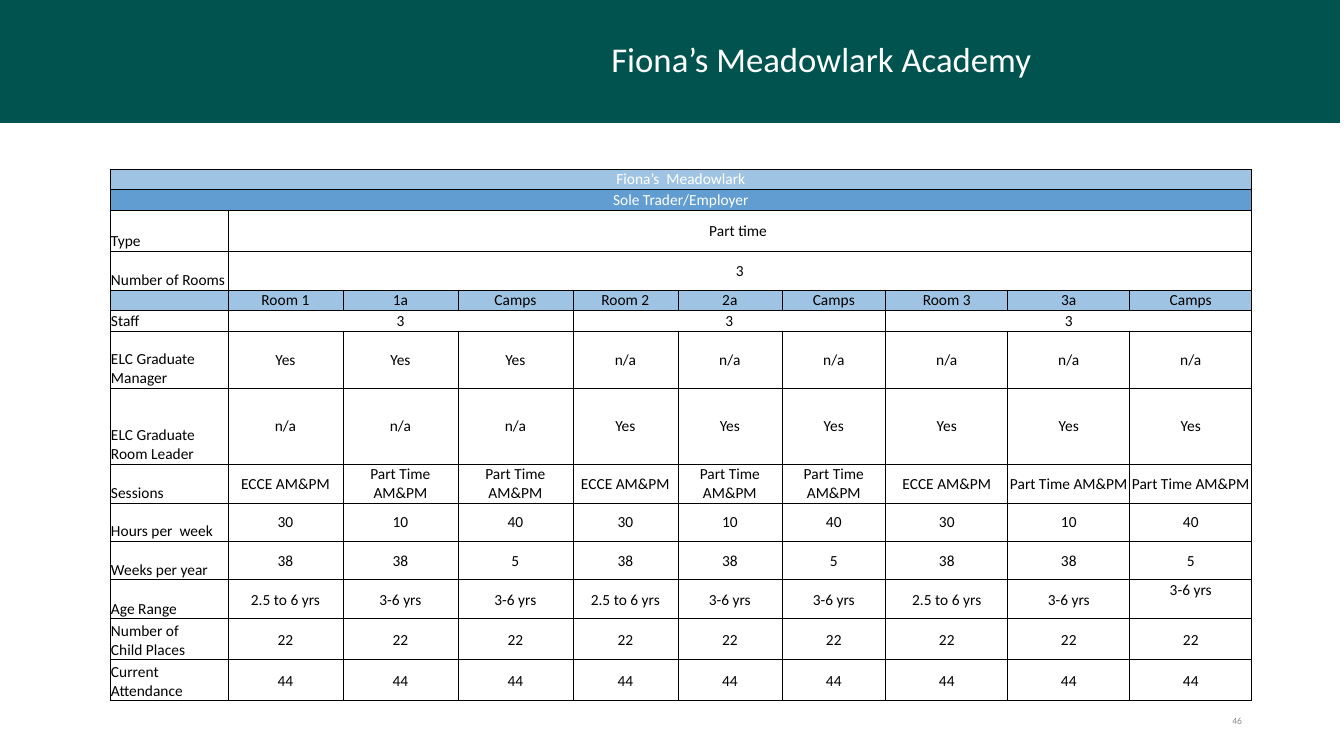
from lxml import etree
from pptx import Presentation, util as u
from pptx.dml.color import RGBColor
from pptx.enum import shapes, text
from pptx.oxml import ns

PX = 914400 / 100.8
FONT = "Calibri"
COLORS = {"green": "00534F", "light": "9FC4E3", "blue": "629DD1",
          "white": "FFFFFF", "black": "000000", "grey": "8C8C8C"}


def px(*lengths):
    return [u.Emu(round(length * PX)) for length in lengths]


def format_text(frame, size, color, align, anchor):
    frame.vertical_anchor = anchor
    frame.word_wrap = True
    for paragraph in frame.paragraphs:
        paragraph.alignment = align
        paragraph.font.name = FONT
        paragraph.font.size = u.Pt(size)
        paragraph.font.color.rgb = RGBColor.from_string(COLORS[color])


LEFT, CENTER, RIGHT = text.PP_ALIGN.LEFT, text.PP_ALIGN.CENTER, text.PP_ALIGN.RIGHT
TOP, MIDDLE, BOTTOM = text.MSO_ANCHOR.TOP, text.MSO_ANCHOR.MIDDLE, text.MSO_ANCHOR.BOTTOM

presentation = Presentation()
presentation.slide_width, presentation.slide_height = px(1344, 756)
slide = presentation.slides.add_slide(presentation.slide_layouts[5])

# Header band and title
band = slide.shapes.add_shape(shapes.MSO_SHAPE.RECTANGLE, *px(0, 0, 306, 123))
band.shadow.inherit = False
band.line.fill.background()
title = slide.shapes.title
title.left, title.top, title.width, title.height = px(303, 0, 1037, 123)
for shape in (band, title):
    shape.fill.solid()
    shape.fill.fore_color.rgb = RGBColor.from_string(COLORS["green"])
title.text_frame.text = "Fiona’s Meadowlark Academy"
title.text_frame.auto_size = text.MSO_AUTO_SIZE.NONE
format_text(title.text_frame, 24.8, "white", CENTER, MIDDLE)
title.text_frame.paragraphs[0].line_spacing = 0.9

# Slide number
number = slide.shapes.add_textbox(*px(950, 701, 302, 40))
number.text_frame.text = "46"
format_text(number.text_frame, 6.8, "grey", RIGHT, MIDDLE)

# Table content: each label is followed by values that share the nine room columns
banners = [("Fiona’s  Meadowlark", "light"), ("Sole Trader/Employer", "blue")]
room_rows = [
    ("Type", ["Part time "]),
    ("Number of Rooms", ["3"]),
    ("", ["Room 1", "1a", "Camps", "Room 2", "2a", "Camps", "Room 3", "3a", "Camps"]),
    ("Staff", ["3"] * 3),
    ("ELC Graduate Manager", ["Yes"] * 3 + ["n/a"] * 6),
    ("ELC Graduate Room Leader", ["n/a"] * 3 + ["Yes"] * 6),
    ("Sessions", ["ECCE AM&PM", "Part Time AM&PM", "Part Time AM&PM"] * 3),
    ("Hours per  week", ["30", "10", "40"] * 3),
    ("Weeks per year", ["38", "38", "5"] * 3),
    ("Age Range", ["2.5 to 6 yrs", "3-6 yrs", "3-6 yrs"] * 3),
    ("Number of \vChild Places", ["22"] * 9),
    ("Current \vAttendance", ["44"] * 9),
]
column_widths = [118] + [115] * 3 + [105, 104, 104] + [122] * 3
row_heights = [20, 21, 41, 39, 20, 21, 57, 76, 39, 38, 39, 39, 41, 41]
HEADER_ROW, AGE_ROW = 4, 11

table = slide.shapes.add_table(
    len(row_heights), len(column_widths),
    *px(110, 169, sum(column_widths), sum(row_heights))).table
table.first_row = table.horz_banding = False
for column, width in zip(table.columns, column_widths):
    column.width = px(width)[0]
for row, height in zip(table.rows, row_heights):
    row.height = px(height)[0]

# Words and merged cells
for row, (banner, color) in enumerate(banners):
    table.cell(row, 0).merge(table.cell(row, 9))
    table.cell(row, 0).text = banner
for row, (label, values) in enumerate(room_rows, len(banners)):
    table.cell(row, 0).text = label
    span = 9 // len(values)
    for index, value in enumerate(values):
        cell = table.cell(row, 1 + index * span)
        if span > 1:
            cell.merge(table.cell(row, (index + 1) * span))
        cell.text = value

# Cell borders, fills and text
row_fills = {0: "light", 1: "blue", HEADER_ROW: "light"}
for row in range(len(row_heights)):
    for column in range(len(column_widths)):
        cell = table.cell(row, column)
        cell.margin_left = cell.margin_right = cell.margin_top = u.Inches(0.01)
        cell.margin_bottom = 0
        properties = cell._tc.get_or_add_tcPr()
        for side in ("a:lnL", "a:lnR", "a:lnT", "a:lnB"):
            line = etree.SubElement(properties, ns.qn(side), w=str(u.Pt(0.5)))
            fill = etree.SubElement(line, ns.qn("a:solidFill"))
            etree.SubElement(fill, ns.qn("a:srgbClr"), val=COLORS["black"])
        if row in row_fills:
            cell.fill.solid()
            cell.fill.fore_color.rgb = RGBColor.from_string(COLORS[row_fills[row]])
        else:
            cell.fill.background()
        is_label = column == 0 and row >= len(banners)
        anchor = BOTTOM if is_label else MIDDLE
        if (row, column) == (AGE_ROW, 9):
            anchor = TOP
        format_text(cell.text_frame, 11, "white" if row < len(banners) else "black",
                    LEFT if is_label else CENTER, anchor)
        cell.vertical_anchor = anchor
        if not cell.text:
            # Keeps empty cells from stretching their row
            end = etree.SubElement(cell.text_frame.paragraphs[0]._p, ns.qn("a:endParaRPr"))
            end.set("sz", "1100")

presentation.save("out.pptx")
